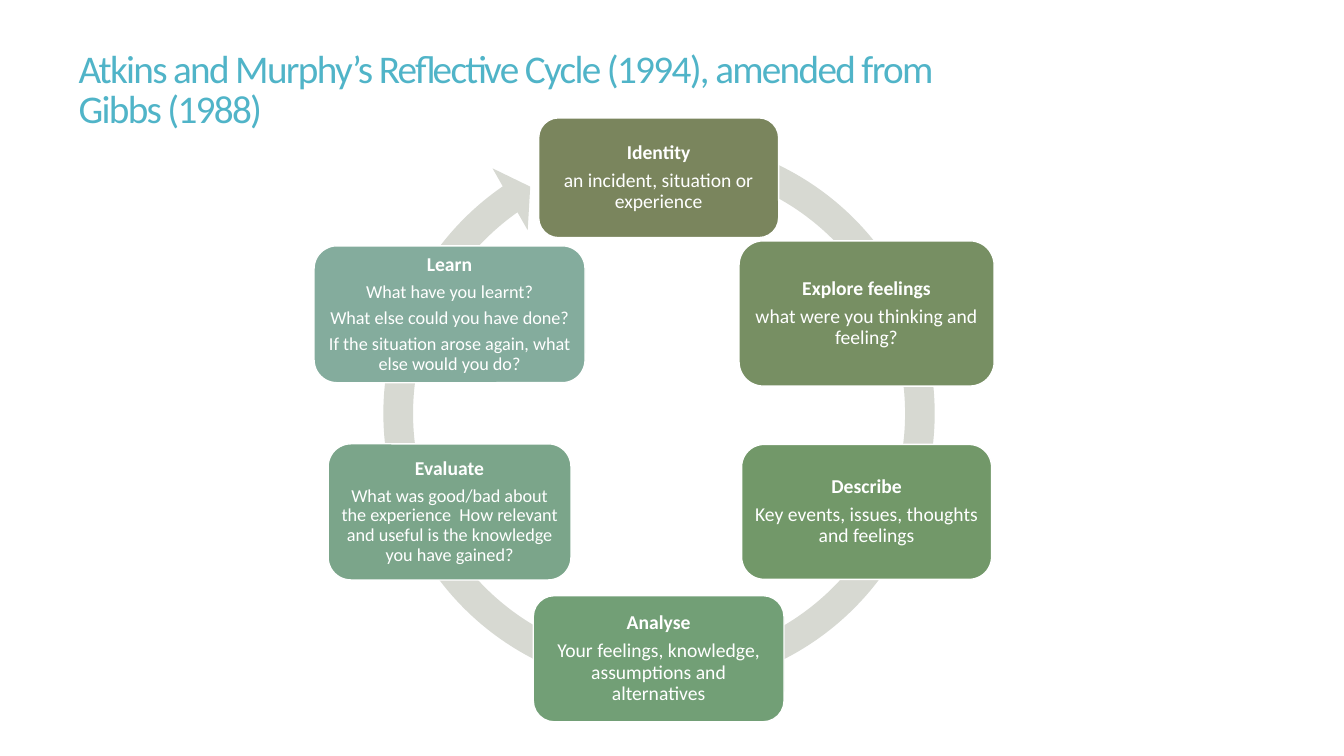
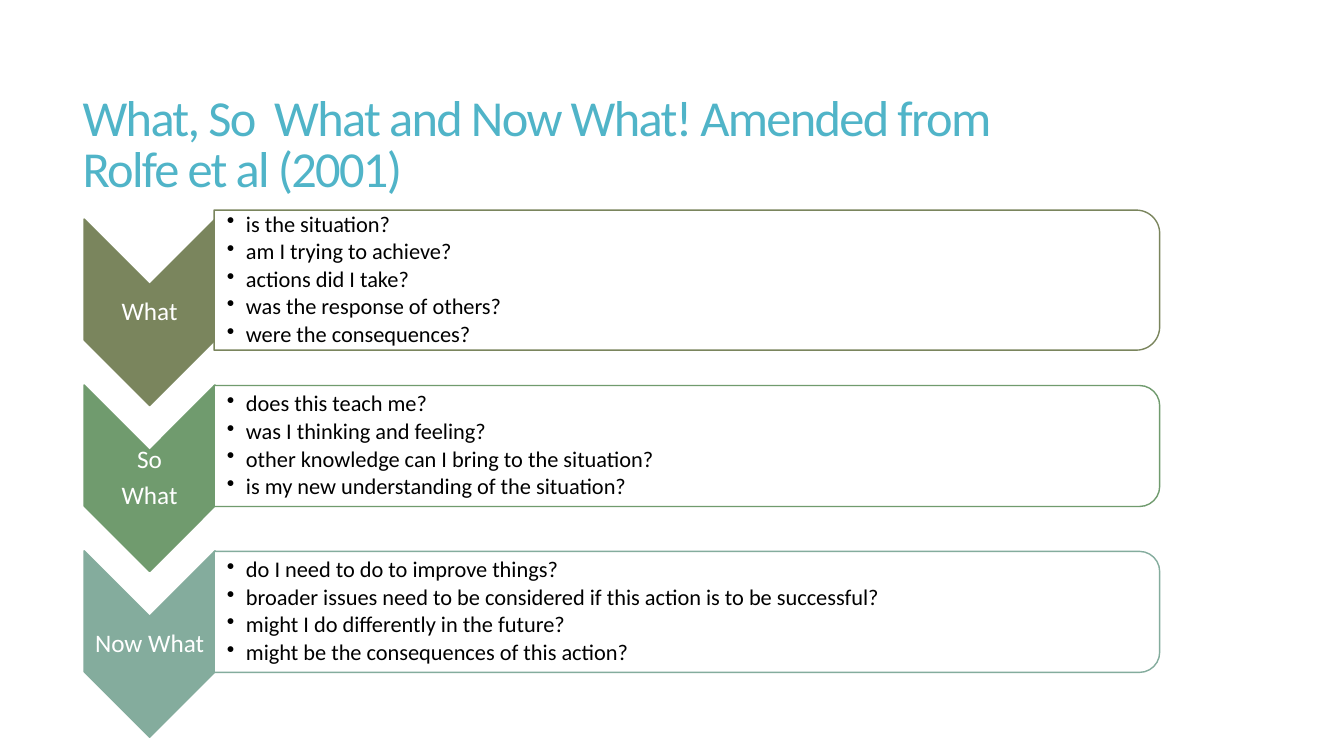
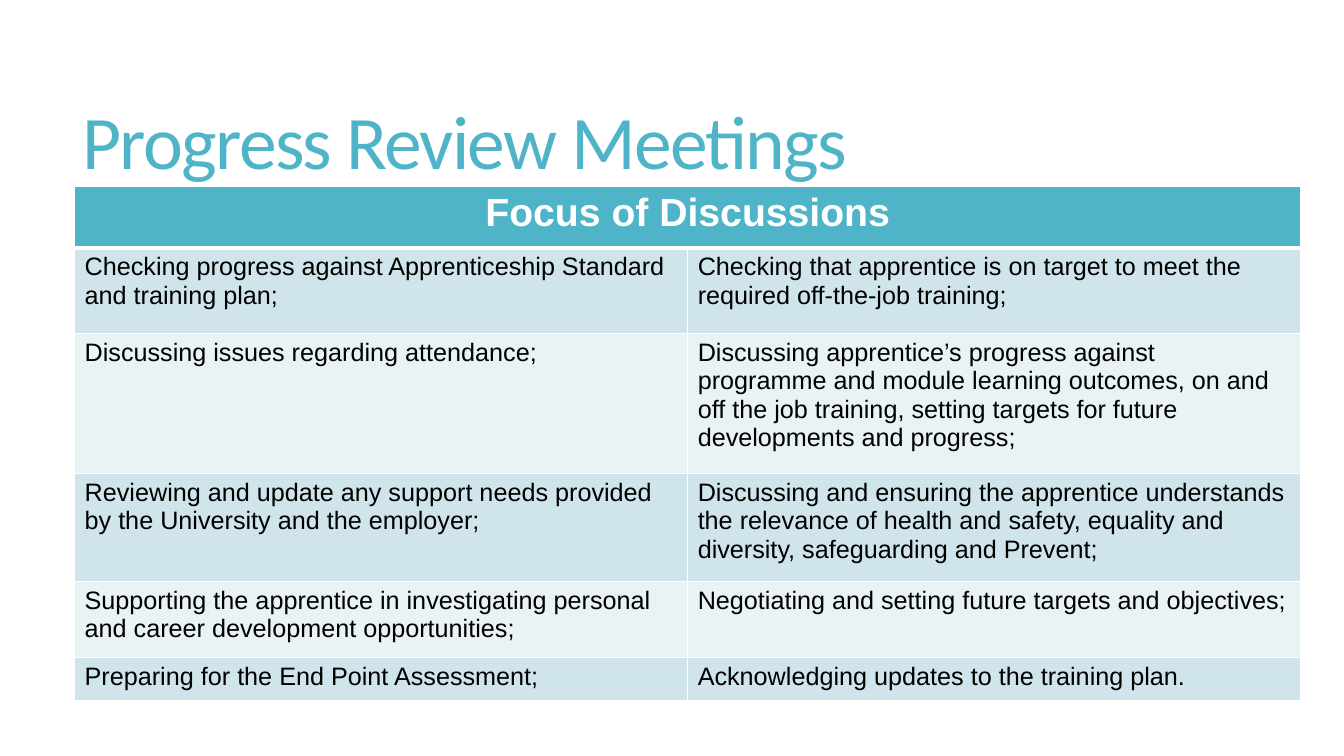
"""Build three slides on reflective models and progress reviews."""
from copy import deepcopy

from lxml import etree
from pptx import Presentation
from pptx.dml.color import RGBColor
from pptx.enum.shapes import MSO_SHAPE
from pptx.enum.text import MSO_ANCHOR, MSO_AUTO_SIZE, PP_ALIGN
from pptx.oxml.ns import qn
from pptx.util import Cm, Pt

ROUNDED = MSO_SHAPE.ROUNDED_RECTANGLE
CHEVRON = MSO_SHAPE.CHEVRON
PANEL = MSO_SHAPE.ROUND_2_SAME_RECTANGLE
RING = MSO_SHAPE.CIRCULAR_ARROW
MIDDLE = MSO_ANCHOR.MIDDLE
NO_FIT = MSO_AUTO_SIZE.NONE
LEFT, CENTER = PP_ALIGN.LEFT, PP_ALIGN.CENTER

COLORS = {
    "accent": "50B4C8", "white": "FFFFFF", "black": "000000", "ring": "D7D9D2",
    "olive": "7A855D", "moss": "778F63", "leaf": "729869", "green": "729F76",
    "sage": "7BA58A", "teal": "84AC9D", "fern": "709B6E",
    "band_dark": "D0E5EB", "band_light": "E9F2F5",
}
FORMATS = {
    "title": {"name": "Calibri", "color": "accent", "align": LEFT, "spacing": 0.85, "gap": 0},
    "heading": {"name": "Calibri", "size": 14, "bold": True, "color": "white",
                "align": CENTER, "spacing": 0.9, "gap": 0.35},
    "detail": {"name": "Calibri", "size": 14, "color": "white",
               "align": CENTER, "spacing": 0.9, "gap": 0.35},
    "label": {"name": "Calibri", "size": 18, "color": "white",
              "align": CENTER, "spacing": 0.9, "gap": 0.35},
    "bullet": {"name": "Calibri", "size": 16, "color": "black",
               "align": LEFT, "spacing": 0.9, "gap": 0.15},
    "table_head": {"name": "Arial", "size": 28, "bold": True, "color": "white",
                   "align": CENTER, "spacing": 1, "gap": 0},
    "table_body": {"name": "Arial", "size": 18, "color": "black",
                   "align": LEFT, "spacing": 1, "gap": 0},
}

CYCLE_STEPS = [
    ("olive", (16.6, 4.48, 6.05, 3.02), 14, "Identity",
     ["an incident, situation or experience"]),
    ("moss", (21.84, 7.9, 6.43, 3.66), 14, "Explore feelings",
     ["what were you thinking and feeling?"]),
    ("leaf", (21.84, 12.9, 6.3, 3.4), 14, "Describe",
     ["Key events, issues, thoughts and feelings"]),
    ("green", (16.6, 16.6, 6.32, 3.18), 14, "Analyse",
     ["Your feelings, knowledge, assumptions and alternatives"]),
    ("sage", (11.33, 12.9, 6.12, 3.43), 13, "Evaluate",
     ["What was good/bad about the experience  How relevant and useful is the "
      "knowledge you have gained?"]),
    ("teal", (11.33, 7.92, 6.83, 3.45), 13, "Learn",
     ["What have you learnt?", "What else could you have done?",
      "If the situation arose again, what else would you do?"]),
]
QUESTION_GROUPS = [
    ("olive", 3.53, ["What"],
     ["is the situation?", "am I trying to achieve?", "actions did I take?",
      "was the response of others?", "were the consequences?"]),
    ("fern", 3.05, ["So", "What"],
     ["does this teach me?", "was I thinking and feeling?",
      "other knowledge can I bring to the situation?",
      "is my new understanding of the situation?"]),
    ("teal", 3.05, ["Now What"],
     ["do I need to do to improve things?",
      "broader issues need to be considered if this action is to be successful?",
      "might I do differently in the future?",
      "might be the consequences of this action?"]),
]
DISCUSSION_ROWS = [
    (2.16, "Checking progress against Apprenticeship Standard and training plan;",
     "Checking that apprentice is on target to meet the required off-the-job training;"),
    (3.53, "Discussing issues regarding attendance;",
     "Discussing apprentice’s progress against programme and module learning outcomes, "
     "on and off the job training, setting targets for future developments and progress;"),
    (2.72, "Reviewing and update any support needs provided by the University and the employer;",
     "Discussing and ensuring the apprentice understands the relevance of health and safety, "
     "equality and diversity, safeguarding and Prevent;"),
    (1.9, "Supporting the apprentice in investigating personal and career development "
     "opportunities;", "Negotiating and setting future targets and objectives;"),
    (1.09, "Preparing for the End Point Assessment;",
     "Acknowledging updates to the training plan."),
]


def rgb(name):
    """Return the named palette colour."""
    return RGBColor.from_string(COLORS[name])


def centered(x, y, width, height):
    """Return left, top, width and height of a frame centred on a point."""
    return [Cm(value) for value in (x - width / 2, y - height / 2, width, height)]


class Deck:
    """Hold the presentation, its style and the current slide."""

    def __init__(self):
        """Start an empty widescreen presentation."""
        self.presentation = Presentation()
        self.presentation.slide_width = Cm(33.87)
        self.presentation.slide_height = Cm(19.05)
        self.slide = None

    def add_slide(self, title, size, left=1.83, top=1.4):
        """Add a slide with a formatted title."""
        layout = self.presentation.slide_layouts[5]
        self.slide = self.presentation.slides.add_slide(layout)
        shape = self.slide.shapes.title
        frame = {"left": left, "top": top, "width": 29.92, "height": 4.6}
        for name, value in frame.items():
            setattr(shape, name, Cm(value))
        self.frame(shape, 0.25, 0.13)
        self.add_lines(shape.text_frame, [title], "title", size)
        paragraph = shape.text_frame.paragraphs[0]
        for run in paragraph.runs:
            run._r.get_or_add_rPr().set("spc", "-120")
        for line_break in paragraph._p.findall(qn("a:br")):
            line_break.append(deepcopy(paragraph.runs[0]._r.rPr))

    def frame(self, shape, side, vertical):
        """Set wrapping, anchor and insets of a text frame."""
        values = {"word_wrap": True, "auto_size": NO_FIT, "vertical_anchor": MIDDLE,
                  "margin_left": Cm(side), "margin_right": Cm(side),
                  "margin_top": Cm(vertical), "margin_bottom": Cm(vertical)}
        for name, value in values.items():
            setattr(shape.text_frame, name, value)

    def add_lines(self, text_frame, lines, style, size=None):
        """Add one paragraph a line, reusing an empty first paragraph."""
        style = FORMATS[style]
        size = size or style["size"]
        for line in lines:
            paragraph = text_frame.paragraphs[0]
            if paragraph.text:
                paragraph = text_frame.add_paragraph()
            paragraph.text = line
            values = {"alignment": style["align"], "line_spacing": style["spacing"],
                      "space_before": Pt(0), "space_after": Pt(style["gap"] * size)}
            for name, value in values.items():
                setattr(paragraph, name, value)
            font_values = {"name": style["name"], "size": Pt(size),
                           "bold": style.get("bold", False)}
            for run in paragraph.runs:
                for name, value in font_values.items():
                    setattr(run.font, name, value)
                run.font.color.rgb = rgb(style["color"])

    def shape(self, kind, box, fill, line=None, rotation=0):
        """Add a flat preset shape centred on a point."""
        shape = self.slide.shapes.add_shape(kind, *centered(*box))
        shape.shadow.inherit = False
        shape.rotation = rotation
        shape.fill.solid()
        shape.fill.fore_color.rgb = rgb(fill)
        if line:
            shape.line.color.rgb = rgb(line)
            shape.line.width = Pt(1)
        else:
            shape.line.fill.background()
        return shape

    def ring(self, box):
        """Add the circular arrow behind the steps."""
        shape = self.shape(RING, box, "ring")
        for index, value in enumerate((0.05, 3.13, 141.11, 171.96, 0.06)):
            shape.adjustments[index] = value

    def step(self, fill, box, size, heading, details):
        """Add a rounded box with a heading and details."""
        shape = self.shape(ROUNDED, box, fill, "white")
        self.frame(shape, 0.16, 0.16)
        self.add_lines(shape.text_frame, [heading], "heading")
        self.add_lines(shape.text_frame, details, "detail", size)

    def text(self, box, lines, style):
        """Add a text box centred on a point."""
        shape = self.slide.shapes.add_textbox(*centered(*box))
        self.frame(shape, 0.03, 0.03)
        self.add_lines(shape.text_frame, lines, style)
        return shape

    def bullets(self, box, lines):
        """Add a bulleted text box."""
        shape = self.text(box, lines, "bullet")
        shape.text_frame.margin_left = Cm(0.31)
        for paragraph in shape.text_frame.paragraphs:
            properties = paragraph._p.get_or_add_pPr()
            properties.set("marL", str(Cm(0.48)))
            properties.set("indent", str(-Cm(0.48)))
            etree.SubElement(properties, qn("a:buChar")).set("char", "•")

    def question_group(self, y, color, height, label, questions):
        """Add a downward chevron with its panel of questions."""
        self.shape(CHEVRON, (3.77, y, 4.7, 3.3), color, color, 90)
        self.text((3.77, y, 3.3, 1.42), label, "label")
        panel_y = y - 0.81
        self.shape(PANEL, (17.31, panel_y, height, 23.83), "white", color, 90)
        self.bullets((17.24, panel_y, 23.66, height - 0.3), questions)

    def cell(self, cell, text, style, fill, top=1, bottom=1):
        """Border, fill and letter one table cell."""
        properties = cell._tc.get_or_add_tcPr()
        for side, width in (("L", 1), ("R", 1), ("T", top), ("B", bottom)):
            border = etree.SubElement(properties, qn("a:ln" + side), w=str(Pt(width)))
            paint = etree.SubElement(border, qn("a:solidFill"))
            etree.SubElement(paint, qn("a:srgbClr"), val=COLORS["white"])
        cell.fill.solid()
        cell.fill.fore_color.rgb = rgb(fill)
        if text:
            self.add_lines(cell.text_frame, [text], style)

    def table(self, heading, rows):
        """Add a two-column table under a merged heading."""
        heights = [1.55] + [row[0] for row in rows]
        table = self.slide.shapes.add_table(
            len(heights), 2, Cm(1.88), Cm(4.7), Cm(30.9), Cm(sum(heights))).table
        for row, height in zip(table.rows, heights):
            row.height = Cm(height)
        for column, text in enumerate((heading, "")):
            table.columns[column].width = Cm(15.45)
            self.cell(table.cell(0, column), text, "table_head", "accent", bottom=3)
        table.cell(0, 0).merge(table.cell(0, 1))
        for index, (_, *texts) in enumerate(rows, 1):
            fill = "band_dark" if index % 2 else "band_light"
            for column, text in enumerate(texts):
                self.cell(table.cell(index, column), text, "table_body", fill,
                          top=3 if index == 1 else 1)


def main():
    """Build and save the presentation."""
    deck = Deck()
    deck.add_slide("Atkins and Murphy’s Reflective Cycle (1994), amended from \vGibbs (1988)",
                   28, left=1.73, top=0)
    deck.ring((16.61, 10.42, 14.94, 14.94))
    for step in CYCLE_STEPS:
        deck.step(*step)

    deck.add_slide("What, So  What and Now What! Amended from \vRolfe et al (2001)", 36)
    for index, group in enumerate(QUESTION_GROUPS):
        deck.question_group(7.87 + 4.18 * index, *group)

    deck.add_slide("Progress Review Meetings", 54)
    deck.table("Focus of Discussions", DISCUSSION_ROWS)
    deck.presentation.save("out.pptx")


if __name__ == "__main__":
    main()
